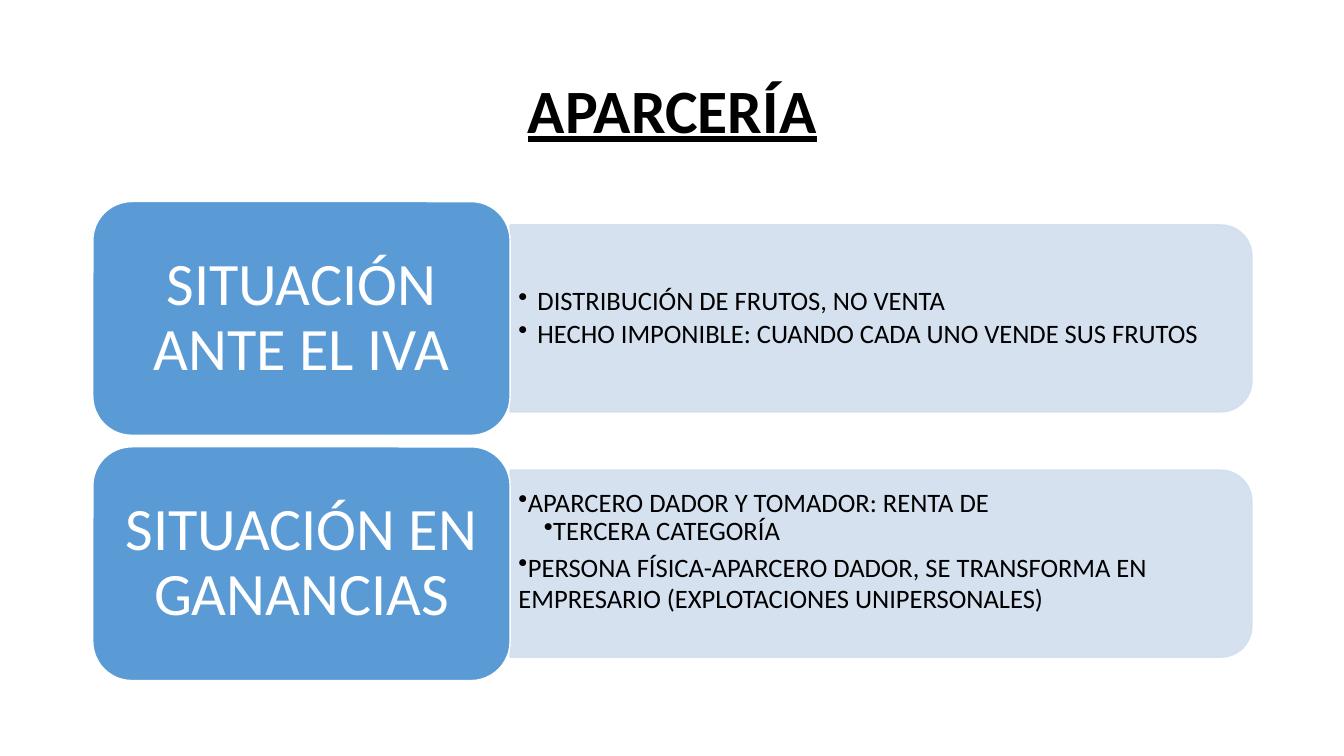
from lxml.etree import SubElement
from pptx import Presentation
from pptx.dml.color import RGBColor
from pptx.enum.shapes import MSO_SHAPE
from pptx.enum.text import MSO_ANCHOR, PP_ALIGN
from pptx.oxml.ns import qn
from pptx.util import Cm, Pt

BLACK = RGBColor(0x00, 0x00, 0x00)
WHITE = RGBColor(0xFF, 0xFF, 0xFF)
BLUE = RGBColor(0x5B, 0x9B, 0xD5)
PALE = RGBColor(0xD2, 0xDE, 0xEF)

LEFT, TOP, WIDTH, HEIGHT, STEP = 2.34, 5.08, 29.21, 5.89, 6.18

# Each point: text, left margin, first-line indent (cm), line spacing, space after (pt)
ROWS = [
    ("SITUACIÓN ANTE EL IVA", 0.11, [
        ("DISTRIBUCIÓN DE FRUTOS, NO VENTA", 0.48, -0.48, 0.9, 2.85),
        ("HECHO IMPONIBLE: CUANDO CADA UNO VENDE SUS FRUTOS",
         0.48, -0.48, 0.9, 2.85),
    ]),
    ("SITUACIÓN EN GANANCIAS", 0.8, [
        ("APARCERO DADOR Y TOMADOR: RENTA DE", 0, 0, 1.0, 0),
        ("TERCERA CATEGORÍA", 0.64, 0, 0.9, 2.85),
        ("PERSONA FÍSICA-APARCERO DADOR, SE TRANSFORMA EN EMPRESARIO "
         "(EXPLOTACIONES UNIPERSONALES)", 0, 0, 1.0, 0),
    ]),
]


def style(para, size, color):
    font = para.font
    font.name, font.size, font.color.rgb = "Calibri", Pt(size), color


def paint(shape, fill, line):
    shape.shadow.inherit = False
    shape.fill.solid()
    shape.fill.fore_color.rgb = fill
    shape.line.color.rgb = line
    shape.line.width = Pt(1)


def fade(shape, percent):
    """Set the opacity of a shape's fill and line."""
    for color in shape.element.spPr.iter(qn("a:srgbClr")):
        SubElement(color, qn("a:alpha"), val=str(percent * 1000))


def frame(shape, side, edge, base):
    text = shape.text_frame
    text.word_wrap = True
    text.vertical_anchor = MSO_ANCHOR.MIDDLE
    text.margin_left = text.margin_right = Cm(side)
    text.margin_top, text.margin_bottom = Cm(edge), Cm(base)
    return text


def add_title(slide, left, top, width, height):
    title = slide.shapes.title
    title.left, title.top = Cm(left), Cm(top)
    title.width, title.height = Cm(width), Cm(height)
    title.text_frame.text = "APARCERÍA"
    para = title.text_frame.paragraphs[0]
    para.alignment = PP_ALIGN.CENTER
    para.line_spacing = 0.9
    style(para, 44, BLACK)
    para.font.bold = para.font.underline = True


def add_panel(slide, left, top, width, height, points, base):
    """Draw a bar rounded on its right end, with bulleted points on it."""
    # The shape is turned a quarter, so its sides swap around one centre.
    shift = (width - height) / 2
    bar = slide.shapes.add_shape(
        MSO_SHAPE.ROUND_2_SAME_RECTANGLE,
        Cm(left + shift), Cm(top - shift), Cm(height), Cm(width))
    bar.rotation = 90
    paint(bar, PALE, PALE)
    fade(bar, 90)

    box = slide.shapes.add_textbox(
        Cm(left), Cm(top + 0.23), Cm(width - 0.23), Cm(height - 0.46))
    text = frame(box, 0.21, 0.11, base)
    for i, (words, margin, indent, lines, after) in enumerate(points):
        para = text.paragraphs[0] if i == 0 else text.add_paragraph()
        para.text = words
        para.line_spacing, para.space_after = lines, Pt(after)
        style(para, 19, BLACK)
        props = para._p.get_or_add_pPr()
        props.set("marL", str(Cm(margin)))
        props.set("indent", str(Cm(indent)))
        SubElement(props, qn("a:buChar"), char="•")
        props.append(props.find(qn("a:defRPr")))


def add_label(slide, left, top, width, height, words):
    label = slide.shapes.add_shape(
        MSO_SHAPE.ROUNDED_RECTANGLE,
        Cm(left), Cm(top), Cm(width), Cm(height))
    paint(label, BLUE, WHITE)
    text = frame(label, 0.46, 0.23, 0.23)
    text.text = words
    para = text.paragraphs[0]
    para.alignment = PP_ALIGN.CENTER
    para.line_spacing = 0.9
    style(para, 43, WHITE)


def add_row(slide, left, top, width, height, words, base, points):
    split = width * 0.36
    add_panel(slide, left + split, top + height * 0.1,
              width - split, height * 0.8, points, base)
    add_label(slide, left, top, split, height, words)


def main():
    deck = Presentation()
    deck.slide_width, deck.slide_height = Cm(33.87), Cm(19.05)
    slide = deck.slides.add_slide(deck.slide_layouts[5])
    add_title(slide, LEFT, 1.01, WIDTH, 3.68)
    for i, row in enumerate(ROWS):
        add_row(slide, LEFT, TOP + i * STEP, WIDTH, HEIGHT, *row)
    deck.save("out.pptx")


if __name__ == "__main__":
    main()
